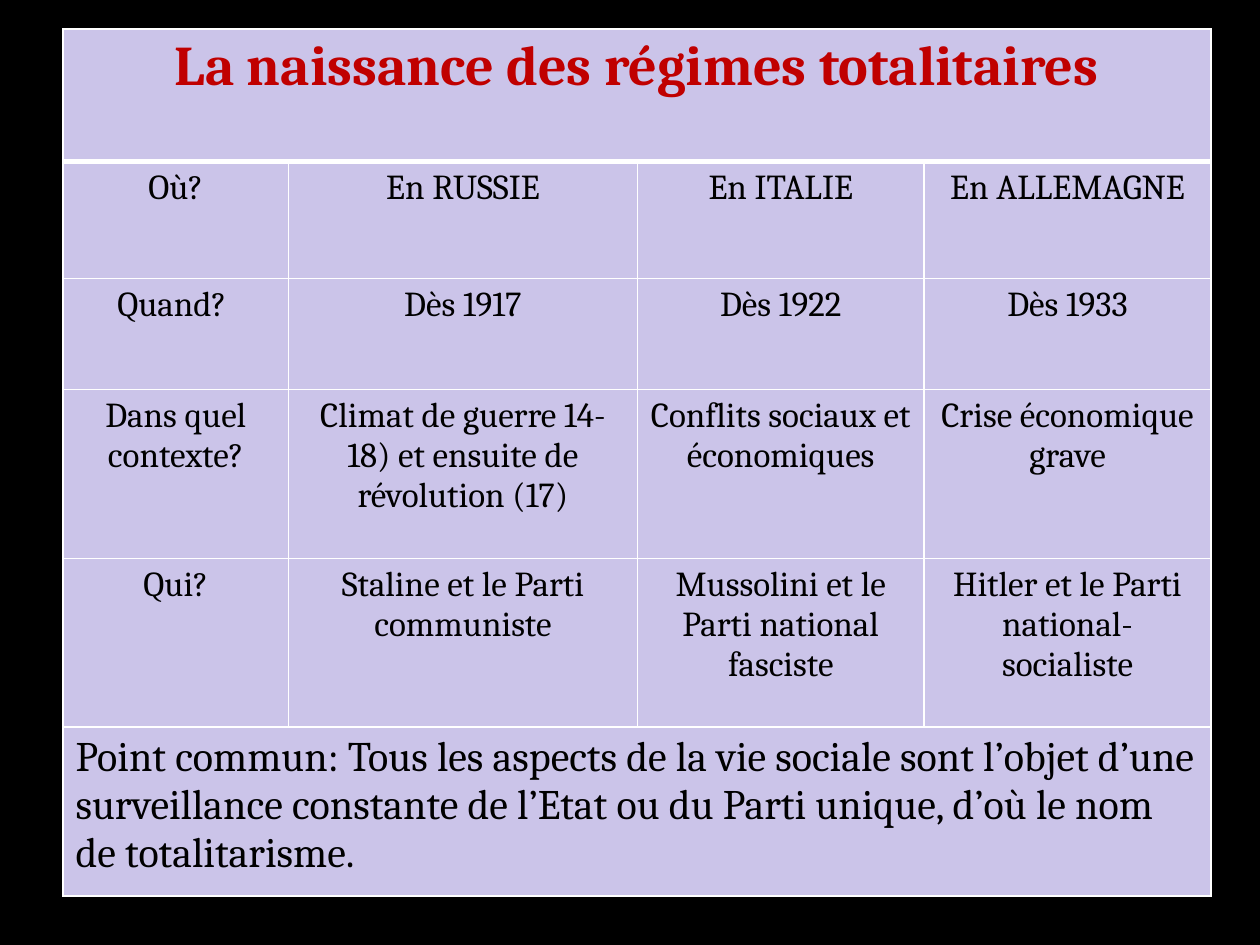
from lxml import etree
from pptx import Presentation
from pptx.dml.color import RGBColor
from pptx.enum.text import PP_ALIGN as Align
from pptx.oxml.ns import qn
from pptx.util import Pt

BLACK = RGBColor(0x00, 0x00, 0x00)
WHITE = RGBColor(0xFF, 0xFF, 0xFF)
RED = RGBColor(0xC0, 0x00, 0x00)
LILAC = RGBColor(0xCB, 0xC4, 0xE9)
FONT = "Cambria"

TITLE = "La naissance des régimes totalitaires"
COMPARISON = [
    ["Où?", "En RUSSIE", "En ITALIE", "En ALLEMAGNE"],
    ["Quand? ", "Dès 1917", "Dès 1922", "Dès 1933"],
    ["Dans quel contexte?",
     "Climat de guerre 14-18) et ensuite de révolution (17)",
     "Conflits sociaux et économiques", "Crise économique grave"],
    ["Qui?", "Staline et le Parti communiste",
     "Mussolini et le Parti national fasciste",
     "Hitler et le Parti national-socialiste"],
]
COMMON_POINT = (
    "Point commun: Tous les aspects de la vie sociale sont l’objet d’une "
    "surveillance constante de l’Etat ou du Parti unique, d’où le nom "
    "de totalitarisme."
)
COLUMN_WIDTHS = [129, 199.5, 164, 164]
ROW_HEIGHTS = [75.6, 67, 63.4, 96.5, 96.5, 96.5]


def set_borders(cell, widths):
    """Draw white borders; widths maps the sides L, R, T, B to points."""
    properties = cell._tc.get_or_add_tcPr()
    for position, side in enumerate("LRTB"):
        line = etree.Element(qn(f"a:ln{side}"), w=str(Pt(widths[side])))
        fill = etree.SubElement(line, qn("a:solidFill"))
        etree.SubElement(fill, qn("a:srgbClr"), val=str(WHITE))
        properties.insert(position, line)


def write_cell(cell, text, size=20, color=BLACK, bold=False, align=Align.CENTER):
    cell.text_frame.text = text
    paragraph = cell.text_frame.paragraphs[0]
    paragraph.alignment = align
    font = paragraph.runs[0].font
    font.name, font.size, font.bold = FONT, Pt(size), bold
    font.color.rgb = color


def add_comparison_table(slide, left, top, width, height):
    last = len(ROW_HEIGHTS) - 1
    table = slide.shapes.add_table(
        len(ROW_HEIGHTS), len(COLUMN_WIDTHS),
        Pt(left), Pt(top), Pt(width), Pt(height)).table
    for column, share in zip(table.columns, COLUMN_WIDTHS):
        column.width = Pt(width * share / sum(COLUMN_WIDTHS))
    for row, share in zip(table.rows, ROW_HEIGHTS):
        row.height = Pt(height * share / sum(ROW_HEIGHTS))

    # Fill and borders, with a thick rule under the title
    for r, row in enumerate(table.rows):
        for cell in row.cells:
            cell.fill.solid()
            cell.fill.fore_color.rgb = LILAC
            set_borders(cell, {"L": 1, "R": 1,
                               "T": 3 if r == 1 else 1,
                               "B": 3 if r == 0 else 1})

    # Title and conclusion span the whole width
    for r in (0, last):
        table.cell(r, 0).merge(table.cell(r, len(COLUMN_WIDTHS) - 1))
    write_cell(table.cell(0, 0), TITLE, size=32, color=RED, bold=True)
    write_cell(table.cell(last, 0), COMMON_POINT, size=24, align=Align.LEFT)

    # One question per row, one country per column
    for r, answers in enumerate(COMPARISON, start=1):
        for c, answer in enumerate(answers):
            write_cell(table.cell(r, c), answer)


def main():
    presentation = Presentation()
    presentation.slide_width, presentation.slide_height = Pt(720), Pt(540)
    slide = presentation.slides.add_slide(presentation.slide_layouts[6])
    slide.background.fill.solid()
    slide.background.fill.fore_color.rgb = BLACK
    add_comparison_table(slide, 36, 16.6, 656, 495.5)
    presentation.save("out.pptx")


if __name__ == "__main__":
    main()
